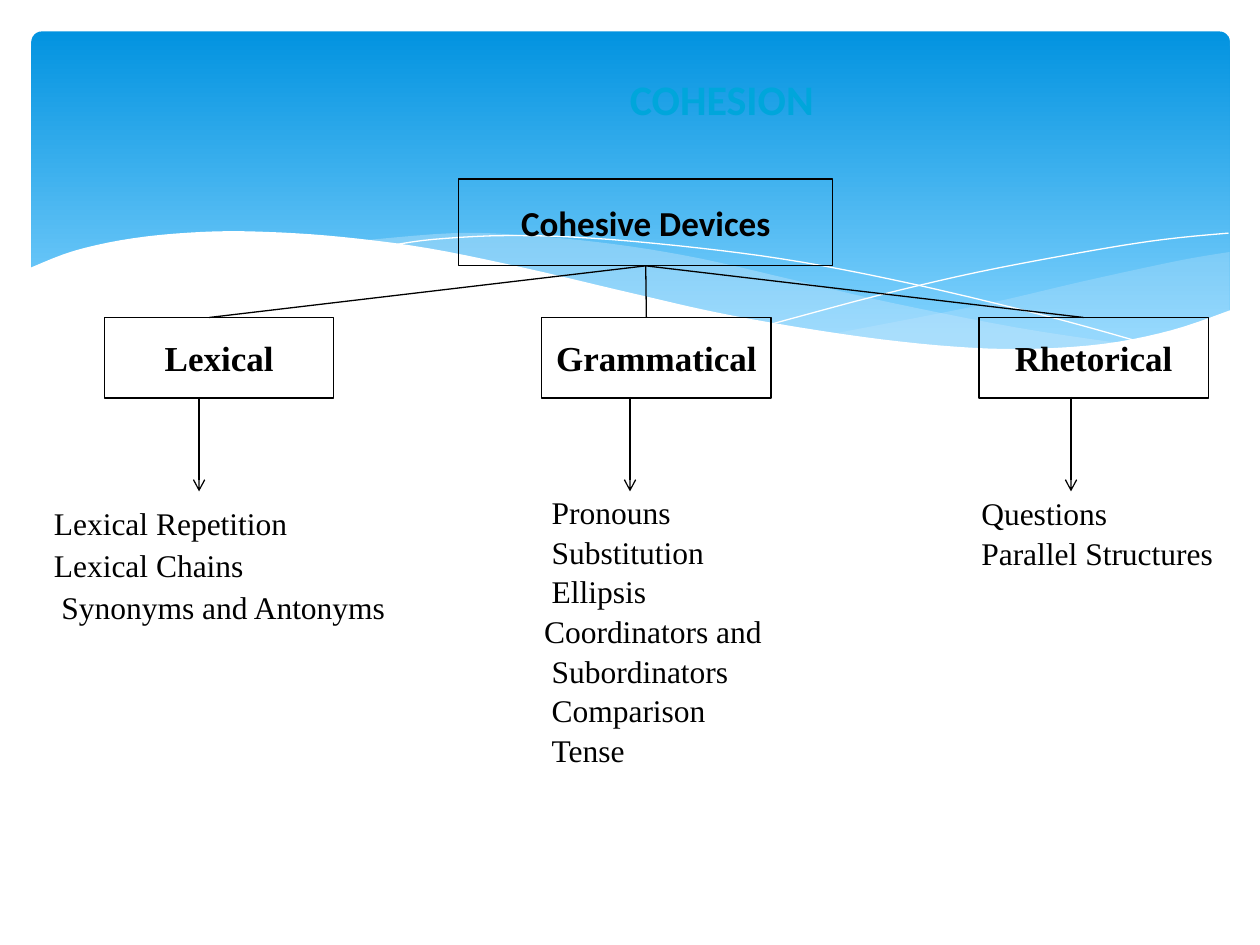
from lxml import etree
from pptx import Presentation
from pptx.dml.color import RGBColor
from pptx.enum.shapes import MSO_CONNECTOR as CONNECTOR, MSO_SHAPE as SHAPE
from pptx.enum.text import MSO_ANCHOR as ANCHOR, PP_ALIGN as ALIGN
from pptx.oxml.ns import qn
from pptx.util import Inches, Pt

SERIF = "Times New Roman"
SANS = "Calibri"
HANGING = 0.06

# Key points of the wave edges, in inches
BACK_TOP = [(9.76, 2), (9.35, 2.07), (8.61, 2.23), (7.79, 2.42), (6.61, 2.65)]
BACK_BOTTOM = [(6.61, 2.65), (7.19, 2.72), (7.69, 2.77), (8.14, 2.78),
               (8.63, 2.75), (9.13, 2.67), (9.49, 2.57), (9.76, 2.47)]
MIDDLE_TOP = [(8.93, 2.73), (8.07, 2.6), (7.06, 2.4), (6.29, 2.22), (5.55, 2.05),
              (4.89, 1.94), (4.2, 1.87), (3.61, 1.85), (2.86, 1.91)]
MIDDLE_BOTTOM = [(2.86, 1.91), (3.62, 2.03), (4.49, 2.22), (5.3, 2.4), (6.18, 2.58),
                 (6.95, 2.7), (7.61, 2.77), (8.18, 2.78), (8.93, 2.73)]
LONG_THREAD = [(3.09, 1.95), (3.44, 1.9), (4.01, 1.87), (4.69, 1.89), (5.56, 1.97),
               (6.36, 2.08), (7.27, 2.26), (8.31, 2.51), (9.07, 2.72)]
SHORT_THREAD = [(6.13, 2.57), (6.95, 2.35), (7.76, 2.16), (8.66, 1.99),
                (9.24, 1.9), (9.75, 1.85)]
FRONT_TOP = [(9.77, 2.46), (9.3, 2.62), (8.75, 2.73), (8.09, 2.77), (7.44, 2.74),
             (6.68, 2.65), (5.79, 2.5), (5.03, 2.33), (4.18, 2.13), (3.4, 1.97),
             (2.71, 1.88), (2.11, 1.84), (1.61, 1.84), (1.06, 1.89), (0.59, 1.99),
             (0.23, 2.13)]
FRONT_BASE = [(0.23, 3.29), (9.77, 3.29)]


def color(value):
    return RGBColor.from_string(value)


def smooth(points, steps=5):
    """Trace a Catmull-Rom curve through the points."""
    padded = [points[0], *points, points[-1]]
    curve = [points[0]]
    for a, b, c, d in zip(padded, padded[1:], padded[2:], padded[3:]):
        for step in range(1, steps + 1):
            t = step / steps
            curve.append(tuple(
                (2 * q + (r - p) * t + (2 * p - 5 * q + 4 * r - s) * t ** 2
                 + (3 * q - p - 3 * r + s) * t ** 3) / 2
                for p, q, r, s in zip(a, b, c, d)))
    return curve


def add_wave(slide, points, fill=None, opacity=100):
    """Add a filled wave, or a thin white thread when there is no fill."""
    start, *rest = [(Inches(x), Inches(y)) for x, y in points]
    builder = slide.shapes.build_freeform(*start)
    builder.add_line_segments(rest, close=fill is not None)
    shape = builder.convert_to_shape()
    shape.shadow.inherit = False
    if fill is None:
        shape.fill.background()
        shape.line.color.rgb = color("FFFFFF")
        shape.line.width = Pt(0)
        return
    shape.fill.solid()
    shape.fill.fore_color.rgb = color(fill)
    shape.line.fill.background()
    if opacity < 100:
        clr = shape.fill._xPr.find(".//" + qn("a:srgbClr"))
        etree.SubElement(clr, qn("a:alpha"), val=str(opacity * 1000))


def add_background(slide):
    panel = slide.shapes.add_shape(SHAPE.ROUNDED_RECTANGLE, Inches(0.25), Inches(0.25),
                                   Inches(9.51), Inches(2.7))
    panel.adjustments[0] = 0.03
    panel.shadow.inherit = False
    panel.line.fill.background()
    panel.fill.gradient()
    panel.fill.gradient_angle = 270
    stops = zip(panel.fill.gradient_stops, (0, 0.9), ("0293E0", "83D3FE"))
    for stop, position, value in stops:
        stop.position = position
        stop.color.rgb = color(value)
    add_wave(slide, smooth(BACK_TOP) + smooth(BACK_BOTTOM), "C6E7FC", 29)
    add_wave(slide, smooth(MIDDLE_TOP) + smooth(MIDDLE_BOTTOM), "C6E7FC", 40)
    add_wave(slide, smooth(LONG_THREAD))
    add_wave(slide, smooth(SHORT_THREAD))
    add_wave(slide, smooth(FRONT_TOP) + FRONT_BASE, "FFFFFF")


def set_font(paragraph, name, size, value="000000", bold=False):
    font = paragraph.font
    font.name, font.size, font.bold = name, Pt(size), bold
    font.color.rgb = color(value)


def add_text(slide, left, top, width, height, lines):
    """Add a text box; return its paragraphs."""
    box = slide.shapes.add_textbox(Inches(left), Inches(top), Inches(width), Inches(height))
    frame = box.text_frame
    frame.word_wrap = True
    frame.vertical_anchor = ANCHOR.MIDDLE
    frame.text = "\n".join(lines)
    return frame.paragraphs


def add_list(slide, left, top, width, height, lines, indents, line_spacing=1.05, before=0):
    """Add a list; indents holds (left margin, first-line indent) per line."""
    paragraphs = add_text(slide, left, top, width, height, lines)
    for number, (paragraph, (margin, first)) in enumerate(zip(paragraphs, indents)):
        properties = paragraph._p.get_or_add_pPr()
        properties.set("marL", str(Inches(margin)))
        properties.set("indent", str(Inches(first)))
        paragraph.line_spacing = line_spacing
        paragraph.space_before = Pt(before if number else 0)
        set_font(paragraph, SERIF, 18)


def add_box(slide, left, top, width, height, label, font_name):
    box = slide.shapes.add_shape(SHAPE.RECTANGLE, Inches(left), Inches(top),
                                 Inches(width), Inches(height))
    box.shadow.inherit = False
    box.fill.background()
    box.line.color.rgb = color("000000")
    box.line.width = Pt(0.75)
    frame = box.text_frame
    frame.word_wrap = True
    frame.vertical_anchor = ANCHOR.MIDDLE
    frame.text = label
    frame.paragraphs[0].alignment = ALIGN.CENTER
    set_font(frame.paragraphs[0], font_name, 20, bold=True)
    return box


def add_line(slide, start, end, arrow=False):
    line = slide.shapes.add_connector(CONNECTOR.STRAIGHT, *map(Inches, start + end))
    line.line.color.rgb = color("000000")
    line.line.width = Pt(0.75)
    if arrow:
        etree.SubElement(line.line._get_or_add_ln(), qn("a:tailEnd"), type="arrow")
    etree.SubElement(line._element.spPr, qn("a:effectLst"))
    return line


def main():
    presentation = Presentation()
    presentation.slide_width, presentation.slide_height = Inches(10), Inches(7.5)
    slide = presentation.slides.add_slide(presentation.slide_layouts[6])
    add_background(slide)

    # Title
    title, = add_text(slide, 4.9, 0.5, 3, 0.56, ["COHESION"])
    set_font(title, SANS, 24, "00A6DB", bold=True)

    # Examples of each kind of device
    add_list(slide, 0.33, 3.92, 3.5, 1.12,
             ["Lexical Repetition", "Lexical Chains", "Synonyms and Antonyms"],
             [(0, 0), (0, 0), (HANGING, 0)], line_spacing=1, before=2.4)
    add_list(slide, 4.22, 3.6, 3, 2.8,
             ["Pronouns", "Substitution", "Ellipsis", "Coordinators and Subordinators",
              "Comparison", "Tense"],
             [(HANGING, 0)] * 3 + [(HANGING, -HANGING)] + [(HANGING, 0)] * 2)
    add_list(slide, 7.69, 3.92, 2.2, 0.6, ["Questions", "Parallel Structures"], [(0, 0)] * 2)

    # Tree of devices
    root = add_box(slide, 3.64, 1.42, 2.97, 0.69, "Cohesive Devices", SANS)
    branches = [("Lexical", 1.58), ("Grammatical", 5), ("Rhetorical", 8.5)]
    for column, (label, arrow_x) in enumerate(branches):
        left = 0.83 + 3.47 * column
        add_box(slide, left, 2.52, 1.82, 0.64, label, SERIF)
        branch = add_line(slide, (5.13, 2.11), (left + 0.83, 2.52))
        branch.begin_connect(root, 2)
        add_line(slide, (arrow_x, 3.15), (arrow_x, 3.9), arrow=True)

    presentation.save("out.pptx")


if __name__ == "__main__":
    main()
